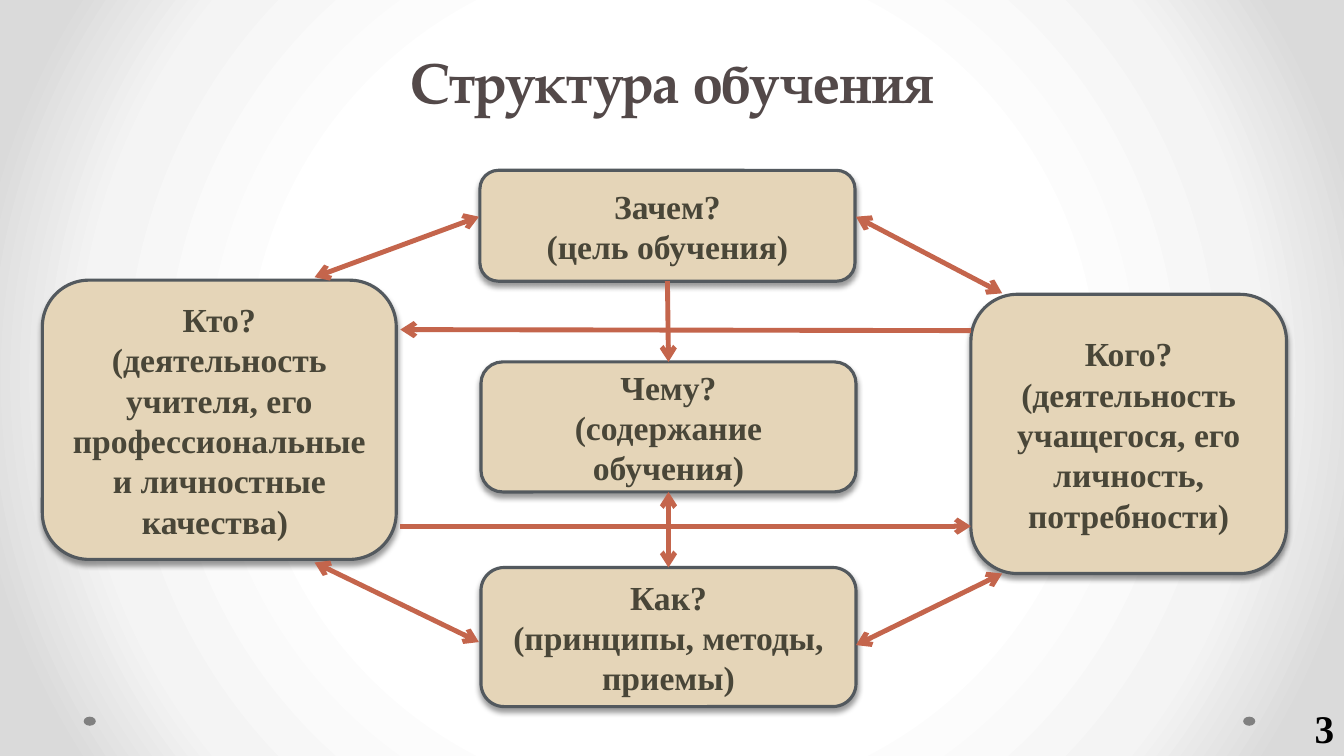
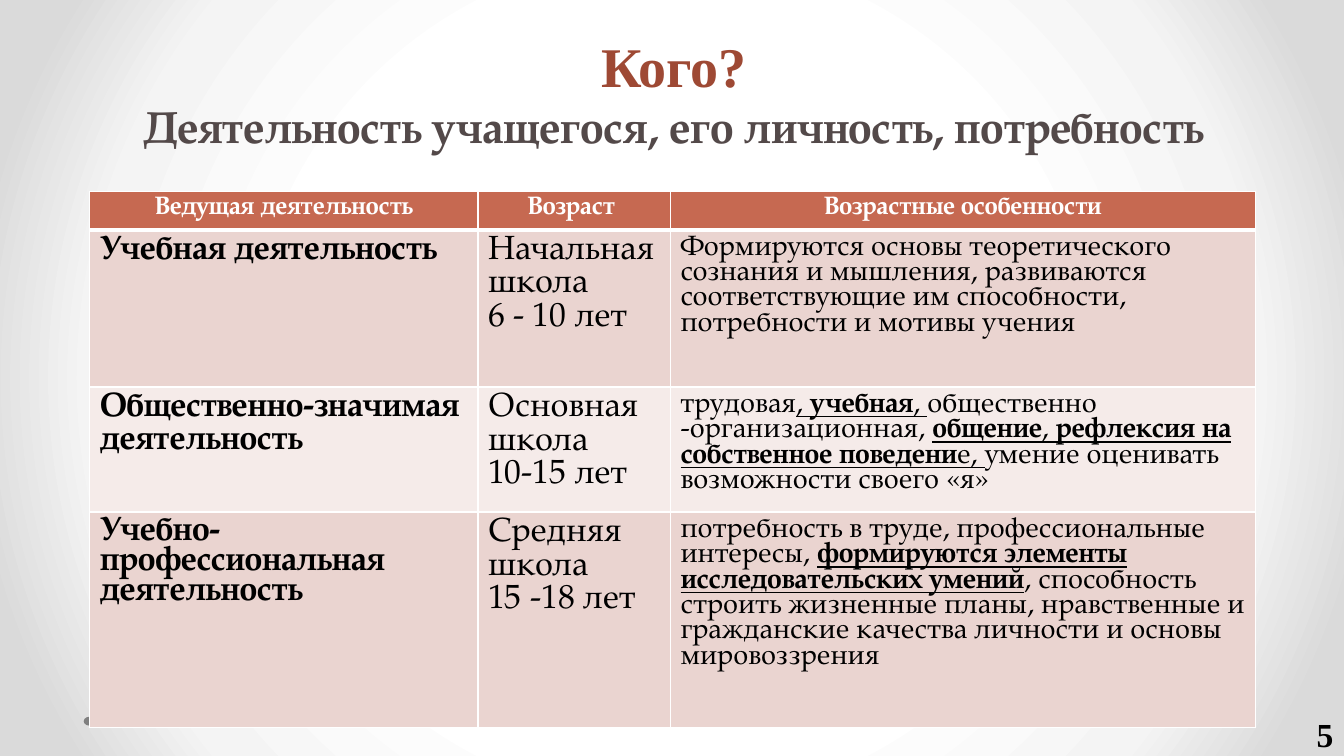
import pptx
import pptx.util
import pptx.dml.color
import pptx.enum.shapes
import pptx.enum.text
import pptx.oxml
import pptx.oxml.ns

Inches, Pt = pptx.util.Inches, pptx.util.Pt
RGBColor = pptx.dml.color.RGBColor
PP_ALIGN = pptx.enum.text.PP_ALIGN
MSO_ANCHOR = pptx.enum.text.MSO_ANCHOR
MSO_SHAPE = pptx.enum.shapes.MSO_SHAPE

SERIF, PAGELLA = "Times New Roman", "TeX Gyre Pagella"
TITLE_GREY = RGBColor(0x53, 0x49, 0x49)
TITLE_RUST = RGBColor(0x9E, 0x49, 0x34)
BOX_FILL = RGBColor(0xE5, 0xD5, 0xB8)
BOX_LINE = RGBColor(0x53, 0x59, 0x5E)
BOX_TEXT = RGBColor(0x49, 0x46, 0x38)
ARROW = RGBColor(0xC4, 0x65, 0x4C)
DOT = RGBColor(0x80, 0x80, 0x80)
HEADER_FILL = RGBColor(0xC6, 0x69, 0x51)
ROW_FILLS = [RGBColor(0xEA, 0xD4, 0xD0), RGBColor(0xF5, 0xEB, 0xE9)]
WHITE = RGBColor(0xFF, 0xFF, 0xFF)
BLACK = RGBColor(0, 0, 0)
BACKGROUND_STOPS = [(50, "FFFFFF"), (76, "F4F4F4"), (92, "DADADA")]

STRUCTURE_TITLE = "Структура обучения"
# text, (left, top, width, height)
QUESTIONS = [
    ("Зачем?\n(цель обучения)", (4.76, 1.69, 3.72, 1.1)),
    ("Чему?\n(содержание обучения)", (4.77, 3.59, 3.72, 1.29)),
    ("Как?\n(принципы, методы, приемы)", (4.77, 5.63, 3.72, 1.38)),
    ("Кто?\n(деятельность учителя, его профессиональные и личностные качества) ",
     (0.42, 2.78, 3.51, 2.77)),
    ("Кого?\n(деятельность учащегося, его личность, потребности)",
     (9.63, 2.92, 3.13, 2.77)),
]
# start, end
TWO_WAY_LINKS = [
    ((3.12, 2.75), (4.75, 2.15)),
    ((8.49, 2.15), (9.94, 2.91)),
    ((3.12, 5.58), (4.75, 6.37)),
    ((8.49, 6.4), (9.94, 5.69)),
    ((6.63, 4.88), (6.63, 5.63)),
]
ONE_WAY_LINKS = [
    ((3.97, 5.22), (9.63, 5.22)),
    ((6.62, 2.79), (6.63, 3.59)),
    ((9.63, 3.28), (3.97, 3.27)),
]

LEARNER_TITLE = "Кого?\vДеятельность учащегося, его личность, потребность"
COLUMN_WIDTHS = [3.85, 1.91, 5.8]
ROW_HEIGHTS = [0.38, 1.56, 1.24, 2.14]
HEADERS = ["Ведущая деятельность", "Возраст ", "Возрастные особенности"]
# activity, age, features as (text, "b" bold and "u" underlined)
STAGES = [
    ("Учебная деятельность", "Начальная школа\n6 - 10 лет", [
        ("Формируются основы теоретического сознания и мышления, развиваются "
         "соответствующие им способности, потребности и мотивы учения", "")]),
    ("Общественно-значимая деятельность", "Основная школа\n10-15 лет", [
        ("трудовая", ""), (", ", "u"), ("учебная", "bu"), (", ", "u"),
        ("общественно -организационная, ", ""), ("общение", "bu"), (", ", "u"),
        ("рефлексия на собственное поведени", "bu"), ("е, ", "u"),
        ("умение оценивать возможности своего «я»", "")]),
    ("Учебно-профессиональная деятельность", "Средняя школа\n15 -18 лет", [
        ("потребность в труде, профессиональные интересы, ", ""),
        ("формируются элементы исследовательских умений", "bu"),
        (", способность строить жизненные планы, нравственные и гражданские "
         "качества личности и основы мировоззрения", "")]),
]
CONDENSED_CELLS = {(1, 2), (2, 2), (3, 2), (3, 0)}


def xml(markup):
    """Parse one element, declaring the namespaces on its first tag."""
    tag, rest = markup.split(" ", 1)
    return pptx.oxml.parse_xml(f"{tag} {pptx.oxml.ns.nsdecls('a', 'p')} {rest}")


def place(box):
    return [Inches(value) for value in box]


def style_run(run, font, size, color, bold=True):
    run.font.name, run.font.size, run.font.bold = font, Pt(size), bold
    run.font.color.rgb = color


def style_frame(frame, font, size, color, bold=True, align=None):
    for paragraph in frame.paragraphs:
        paragraph.alignment = align
        for run in paragraph.runs:
            style_run(run, font, size, color, bold)


def set_background(master):
    stops = "".join(f'<a:gs pos="{pos * 1000}"><a:srgbClr val="{color}"/></a:gs>'
                    for pos, color in BACKGROUND_STOPS)
    common = master.element.cSld
    for old in common.findall(pptx.oxml.ns.qn("p:bg")):
        common.remove(old)
    common.insert(0, xml(
        f'<p:bg ><p:bgPr><a:gradFill rotWithShape="1"><a:gsLst>{stops}</a:gsLst>'
        '<a:path path="circle"><a:fillToRect l="50000" t="50000" r="50000" b="50000"/>'
        '</a:path></a:gradFill><a:effectLst/></p:bgPr></p:bg>'))


def add_master_dots(master, slide):
    """Draw the footer dots and move them to the back of the master."""
    for number, left in enumerate((12.33, 0.83)):
        dot = slide.shapes.add_shape(MSO_SHAPE.OVAL, *place((left, 7.11, 0.12, 0.09)))
        dot.shadow.inherit = False
        dot.fill.solid()
        dot.fill.fore_color.rgb = DOT
        dot.line.fill.background()
        dot.element.nvSpPr.cNvPr.set("id", str(100 + number))
        master.shapes.element.insert(2 + number, dot.element)


def add_slide(deck, title, box):
    slide = deck.slides.add_slide(deck.slide_layouts.get_by_name("Title Only"))
    heading = slide.shapes.title
    heading.left, heading.top, heading.width, heading.height = place(box)
    frame = heading.text_frame
    frame.text = title
    frame.auto_size = pptx.enum.text.MSO_AUTO_SIZE.NONE
    frame.vertical_anchor = MSO_ANCHOR.BOTTOM
    style_frame(frame, PAGELLA, 40, TITLE_GREY, align=PP_ALIGN.CENTER)
    return slide


def add_page_number(slide, number, box, size):
    frame = slide.shapes.add_textbox(*place(box)).text_frame
    frame.word_wrap = False
    frame.text = number
    style_frame(frame, SERIF, size, BLACK)


def add_question(slide, text, box):
    shape = slide.shapes.add_shape(MSO_SHAPE.ROUNDED_RECTANGLE, *place(box))
    shape.fill.solid()
    shape.fill.fore_color.rgb = BOX_FILL
    shape.line.color.rgb = BOX_LINE
    shape.line.width = Pt(2.25)
    shape.element.spPr.append(xml(
        f'<a:effectLst ><a:outerShdw blurRad="{Pt(4)}" dist="{Pt(3)}" dir="5400000" '
        'rotWithShape="0"><a:srgbClr val="000000"><a:alpha val="40000"/></a:srgbClr>'
        '</a:outerShdw></a:effectLst>'))
    frame = shape.text_frame
    frame.text = text
    frame.vertical_anchor = MSO_ANCHOR.MIDDLE
    style_frame(frame, SERIF, 24, BOX_TEXT, align=PP_ALIGN.CENTER)


def add_link(slide, start, end, ends):
    link = slide.shapes.add_connector(
        pptx.enum.shapes.MSO_CONNECTOR.STRAIGHT, *place(start + end))
    link.line.color.rgb = ARROW
    link.line.width = Pt(3.5)
    for tag in ends:
        link.line._get_or_add_ln().append(xml(f'<a:{tag} type="arrow"/>'))
    link.element.spPr.append(xml("<a:effectLst />"))


def set_borders(cell, bottom):
    properties = cell._tc.get_or_add_tcPr()
    for index, (side, width) in enumerate(zip("LRTB", (1, 1, 1, bottom))):
        properties.insert(index, xml(
            f'<a:ln{side} w="{Pt(width)}"><a:solidFill><a:srgbClr val="{WHITE}"/>'
            f'</a:solidFill></a:ln{side}>'))


def fill_features(cell, features):
    paragraph = cell.text_frame.paragraphs[0]
    for text, marks in features:
        run = paragraph.add_run()
        run.text = text
        style_run(run, PAGELLA, 20, BLACK, "b" in marks)
        run.font.underline = "u" in marks


def add_stage_table(slide):
    table = slide.shapes.add_table(
        len(ROW_HEIGHTS), len(COLUMN_WIDTHS),
        *place((0.89, 1.9, sum(COLUMN_WIDTHS), sum(ROW_HEIGHTS)))).table
    for column, width in zip(table.columns, COLUMN_WIDTHS):
        column.width = Inches(width)
    for row, height in zip(table.rows, ROW_HEIGHTS):
        row.height = Inches(height)
    for r, contents in enumerate([HEADERS] + STAGES):
        for c, content in enumerate(contents):
            cell = table.cell(r, c)
            cell.fill.solid()
            cell.fill.fore_color.rgb = ROW_FILLS[(r - 1) % 2] if r else HEADER_FILL
            set_borders(cell, 1 if r else 3)
            if r and c == 2:
                fill_features(cell, content)
            else:
                cell.text_frame.text = content
                if r:
                    style_frame(cell.text_frame, PAGELLA, 24, BLACK, bold=c == 0)
                else:
                    style_frame(cell.text_frame, PAGELLA, 18, WHITE, align=PP_ALIGN.CENTER)
            if (r, c) in CONDENSED_CELLS:
                paragraph = cell.text_frame.paragraphs[0]
                paragraph.line_spacing, paragraph.space_before = 0.9, Pt(10)


def build_structure(deck):
    slide = add_slide(deck, STRUCTURE_TITLE, (0.67, -0.56, 12, 1.75))
    slide.shapes.title.text_frame.paragraphs[0].line_spacing = Pt(58)
    for text, box in QUESTIONS:
        add_question(slide, text, box)
    for start, end in TWO_WAY_LINKS:
        add_link(slide, start, end, ("headEnd", "tailEnd"))
    for start, end in ONE_WAY_LINKS:
        add_link(slide, start, end, ("tailEnd",))
    add_page_number(slide, "3", (12.94, 6.94, 0.4, 0.57), 28)
    return slide


def build_learner(deck):
    slide = add_slide(deck, LEARNER_TITLE, (-0.17, 0.11, 13.71, 1.45))
    question, subject = slide.shapes.title.text_frame.paragraphs[0].runs
    style_run(question, SERIF, 40, TITLE_RUST)
    style_run(subject, PAGELLA, 32, TITLE_GREY)
    add_stage_table(slide)
    add_page_number(slide, "5", (12.96, 7.03, 0.37, 0.5), 24)


def main():
    deck = pptx.Presentation()
    deck.slide_width, deck.slide_height = Inches(13.33), Inches(7.5)
    set_background(deck.slide_master)
    structure = build_structure(deck)
    add_master_dots(deck.slide_master, structure)
    build_learner(deck)
    deck.save("out.pptx")


if __name__ == "__main__":
    main()
